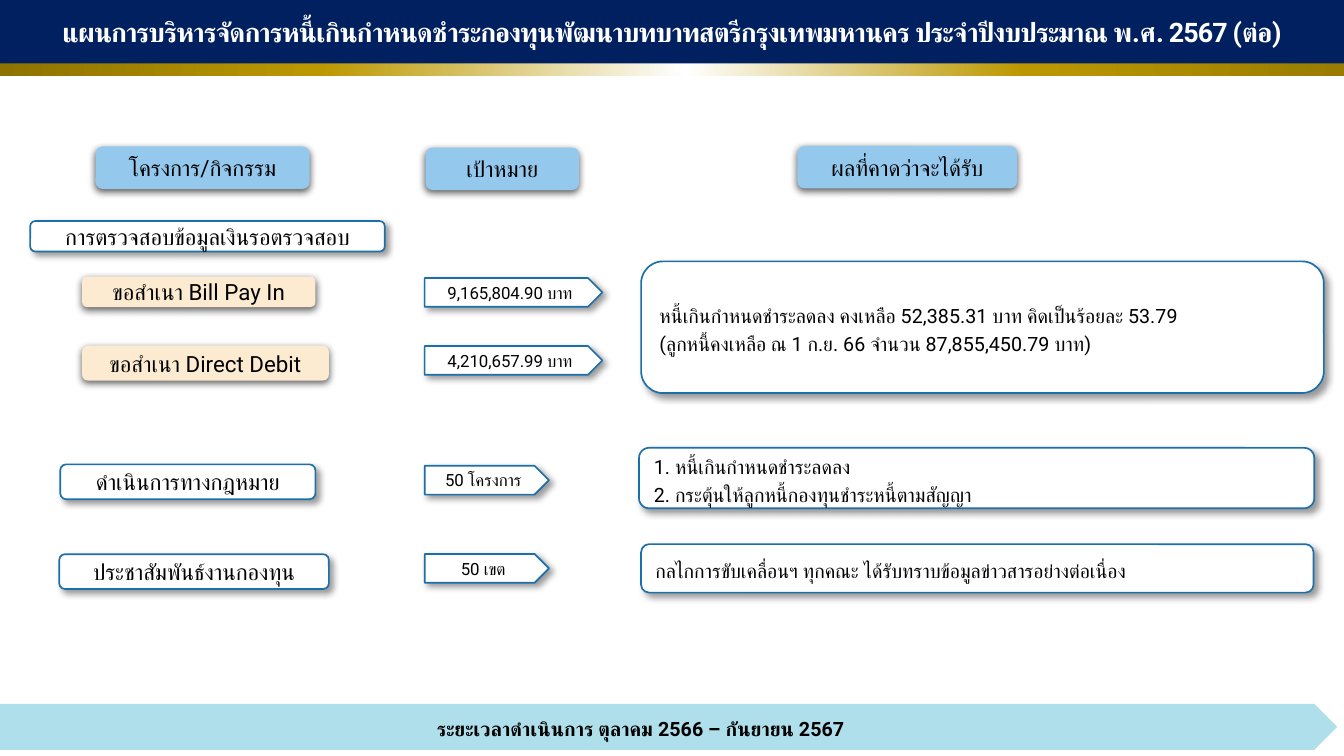
from dataclasses import dataclass

from lxml.etree import SubElement
from pptx import Presentation
from pptx.dml.color import RGBColor
from pptx.enum.shapes import MSO_SHAPE as SHAPE
from pptx.enum.text import MSO_ANCHOR as ANCHOR, PP_ALIGN as ALIGN
from pptx.oxml.ns import qn
from pptx.util import Inches, Pt

FONT = "Roboto"
BLACK, WHITE, NAVY, OUTLINE = "000000", "FFFFFF", "002060", "1D6FA9"
SKY, CREAM, AQUA = "94C8ED", "FCEBD1", "AFDFEB"
GOLD = [(0, "8E7300"), (24, "BC9800"), (51, WHITE), (76, "BC9800"), (100, "9A7D00")]
SIDE_SHADOW = dict(alpha=40, blur=4, distance=3, angle=45)
DROP_SHADOW = dict(alpha=63, blur=4.5, distance=1.5, angle=90)
HEADING = dict(fill=SKY, shadow=DROP_SHADOW)
STEP = dict(fill=CREAM, shadow=DROP_SHADOW)
CARD = dict(fill=WHITE, line=OUTLINE, shadow=SIDE_SHADOW)
LABEL = dict(size=13.3)
AMOUNT = dict(size=10)
RESULT = dict(size=11.7, align=ALIGN.LEFT, spacing=1.2)


@dataclass
class Box:
    """A rectangle in inches."""
    left: float
    top: float
    width: float
    height: float

    def inner(self, left, top, width, height):
        """Return an inner box given as percentages of this one."""
        return Box(self.left + self.width * left / 100, self.top + self.height * top / 100,
                   self.width * width / 100, self.height * height / 100)

    def row(self, left, middle, width, height):
        """Return an inner box centred vertically on a percentage."""
        return self.inner(left, middle - height / 2, width, height)

    def lengths(self):
        """Return the four sides as slide lengths."""
        return [Inches(side) for side in (self.left, self.top, self.width, self.height)]


def color(value):
    """Turn a hex string into a colour."""
    return RGBColor.from_string(value)


def add_shadow(shape, alpha, blur, distance, angle):
    """Give a shape an outer black shadow."""
    effects = shape._element.spPr.find(qn("a:effectLst"))
    outer = SubElement(effects, qn("a:outerShdw"), blurRad=str(Pt(blur)), dist=str(Pt(distance)),
                       dir=str(angle * 60000), algn="t", rotWithShape="0")
    tint = SubElement(outer, qn("a:srgbClr"), val=BLACK)
    SubElement(tint, qn("a:alpha"), val=str(alpha * 1000))


def add_block(slide, kind, box, fill, line=None, shadow=None):
    """Add a preset shape with its fill, outline and shadow."""
    shape = slide.shapes.add_shape(kind, *box.lengths())
    shape.fill.solid()
    shape.fill.fore_color.rgb = color(fill)
    if line:
        shape.line.color.rgb = color(line)
        shape.line.width = Pt(1)
    else:
        shape.line.fill.background()
    shape.shadow.inherit = False
    if shadow:
        add_shadow(shape, **shadow)
    return shape


def set_gradient(shape, stops):
    """Fill a shape with a left-to-right gradient."""
    shape.fill.gradient()
    shape.fill.gradient_angle = 0
    stop_list = shape._element.spPr.find(qn("a:gradFill")).find(qn("a:gsLst"))
    for stop in list(stop_list):
        stop_list.remove(stop)
    for position, value in stops:
        stop = SubElement(stop_list, qn("a:gs"), pos=str(position * 1000))
        SubElement(stop, qn("a:srgbClr"), val=value)


def write(shape, text, size, ink=BLACK, bold=False, align=ALIGN.CENTER,
          anchor=ANCHOR.MIDDLE, spacing=None, tracking=None):
    """Write one paragraph for each line of the text."""
    frame = shape.text_frame
    frame.word_wrap = True
    frame.vertical_anchor = anchor
    for index, content in enumerate(text.split("\n")):
        paragraph = frame.add_paragraph() if index else frame.paragraphs[0]
        paragraph.alignment = align
        if spacing:
            paragraph.line_spacing = spacing
        run = paragraph.add_run()
        run.text = content
        run.font.name, run.font.size, run.font.bold = FONT, Pt(size), bold
        run.font.color.rgb = color(ink)
        properties = run._r.get_or_add_rPr()
        SubElement(properties, qn("a:cs"), typeface=FONT)
        if tracking:
            properties.set("spc", str(int(tracking * 100)))


def add_column(slide, box, entries):
    """Place the entries of one column on their rows."""
    for kind, place, style, text, text_format in entries:
        write(add_block(slide, kind, box.row(*place), **style), text, **text_format)


def add_activities(slide, box):
    """Add the column of projects and activities."""
    add_column(slide, box, [(SHAPE.ROUNDED_RECTANGLE, *entry, LABEL) for entry in [
        ((0, 21.2, 97.7, 5.6), CARD, "การตรวจสอบข้อมูลเงินรอตรวจสอบ"),
        ((18, 8.6, 59, 7.8), HEADING, "โครงการ/กิจกรรม"),
        ((14.3, 31.4, 64.3, 5.6), STEP, "ขอสำเนา Bill Pay In"),
        ((14.3, 44.5, 68, 6.4), STEP, "ขอสำเนา Direct Debit"),
        ((8.3, 66.3, 70.3, 6.4), CARD, "ดำเนินการทางกฎหมาย"),
        ((8, 82.8, 74.3, 6.4), CARD, "ประชาสัมพันธ์งานกองทุน"),
    ]])


def add_targets(slide, box):
    """Add the column of targets."""
    heading = (SHAPE.ROUNDED_RECTANGLE, (0.5, 8.8, 85.3, 7.8), HEADING, "เป้าหมาย", LABEL)
    add_column(slide, box, [heading] + [
        (SHAPE.PENTAGON, (0, middle, width, 5.3), CARD, text, AMOUNT) for middle, width, text in [
            (31.5, 98.7, "9,165,804.90 บาท"),
            (44, 98.7, "4,210,657.99 บาท"),
            (66, 69, "50 โครงการ"),
            (82.2, 69, "50 เขต"),
        ]])


def add_results(slide, box):
    """Add the column of expected results."""
    add_column(slide, box, [(SHAPE.ROUNDED_RECTANGLE, *entry) for entry in [
        ((22.9, 8.5, 32.2, 7.8), HEADING, "ผลที่คาดว่าจะได้รับ", LABEL),
        ((0, 37.9, 100, 24.2), CARD,
         "หนี้เกินกำหนดชำระลดลง คงเหลือ 52,385.31 บาท คิดเป็นร้อยละ 53.79\n"
         "(ลูกหนี้คงเหลือ ณ 1 ก.ย. 66 จำนวน 87,855,450.79 บาท)", RESULT),
        ((-0.3, 65.6, 98.9, 11.1), CARD,
         "1. หนี้เกินกำหนดชำระลดลง\n2. กระตุ้นให้ลูกหนี้กองทุนชำระหนี้ตามสัญญา", RESULT),
        ((0, 82.2, 98.5, 8.9), CARD,
         "กลไกการขับเคลื่อนฯ ทุกคณะ ได้รับทราบข้อมูลข่าวสารอย่างต่อเนื่อง", RESULT),
    ]])


def add_timeline(slide, box):
    """Add the arrow band with the working period."""
    add_block(slide, SHAPE.PENTAGON, box, AQUA)
    period = slide.shapes.add_textbox(*box.inner(0, 16, 95.8, 74).lengths())
    write(period, "ระยะเวลาดำเนินการ ตุลาคม 2566 – กันยายน 2567", 11.7, bold=True, anchor=ANCHOR.TOP)


def add_header(slide, box):
    """Add the navy title bar over its golden edge."""
    set_gradient(add_block(slide, SHAPE.RECTANGLE, box, WHITE), GOLD)
    title = add_block(slide, SHAPE.RECTANGLE, box.inner(0, 0, 100, 83), NAVY)
    write(title, "แผนการบริหารจัดการหนี้เกินกำหนดชำระกองทุนพัฒนาบทบาทสตรีกรุงเทพมหานคร "
                 "ประจำปีงบประมาณ พ.ศ. 2567 (ต่อ)", 16, ink=WHITE, bold=True, tracking=-0.5)


def main():
    """Build and save the slide."""
    presentation = Presentation()
    page = Box(0, 0, 11.11, 6.25)
    presentation.slide_width, presentation.slide_height = page.lengths()[2:]
    slide = presentation.slides.add_slide(presentation.slide_layouts[6])
    add_activities(slide, page.inner(2.25, 16, 27, 72))
    add_targets(slide, page.inner(31.6, 16, 13.4, 72))
    add_results(slide, page.inner(47.7, 16, 50.8, 72))
    add_timeline(slide, page.inner(0, 93.1, 99.5, 6.1))
    add_header(slide, page.inner(0, 0, 100, 10.1))
    presentation.save("out.pptx")


if __name__ == "__main__":
    main()
